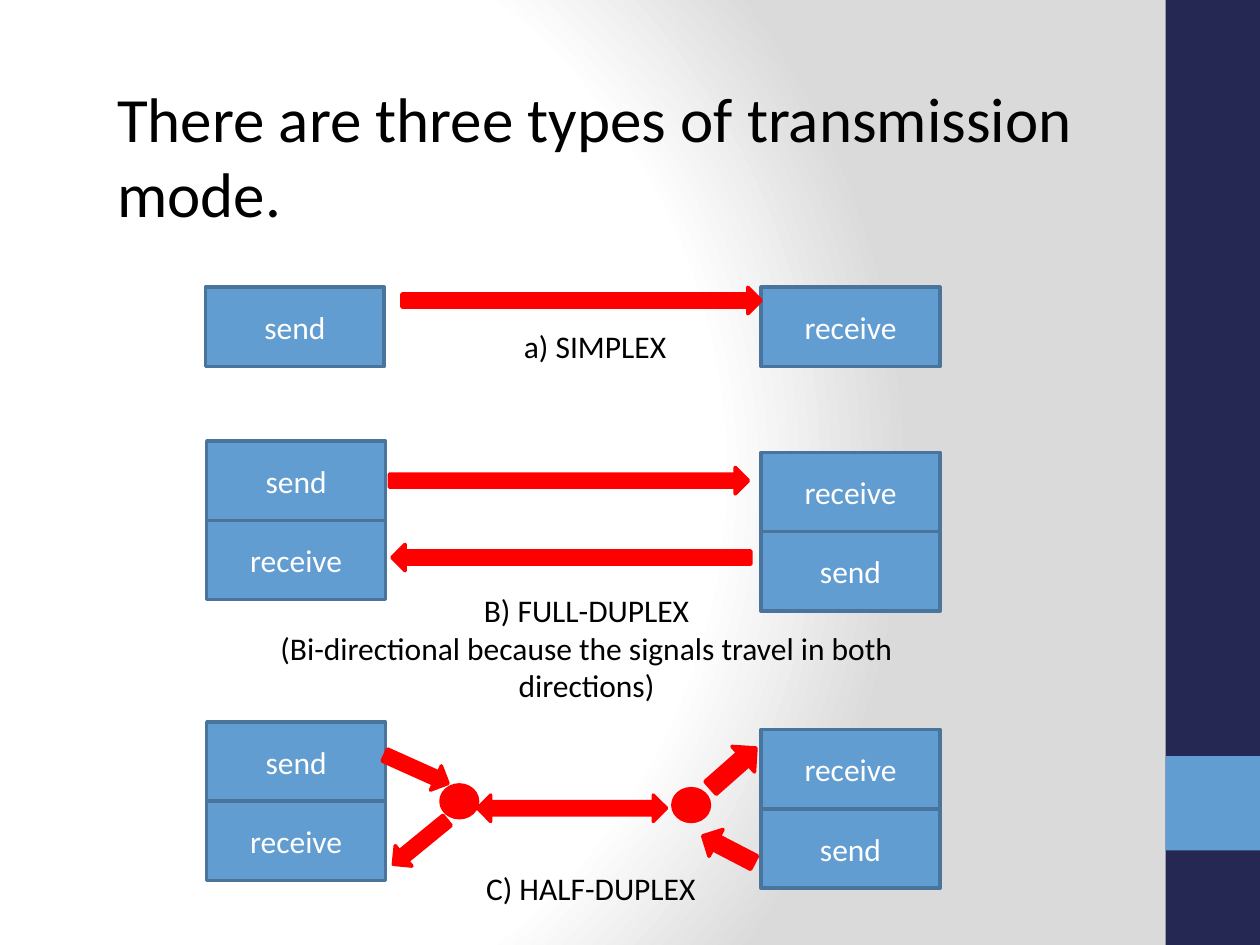
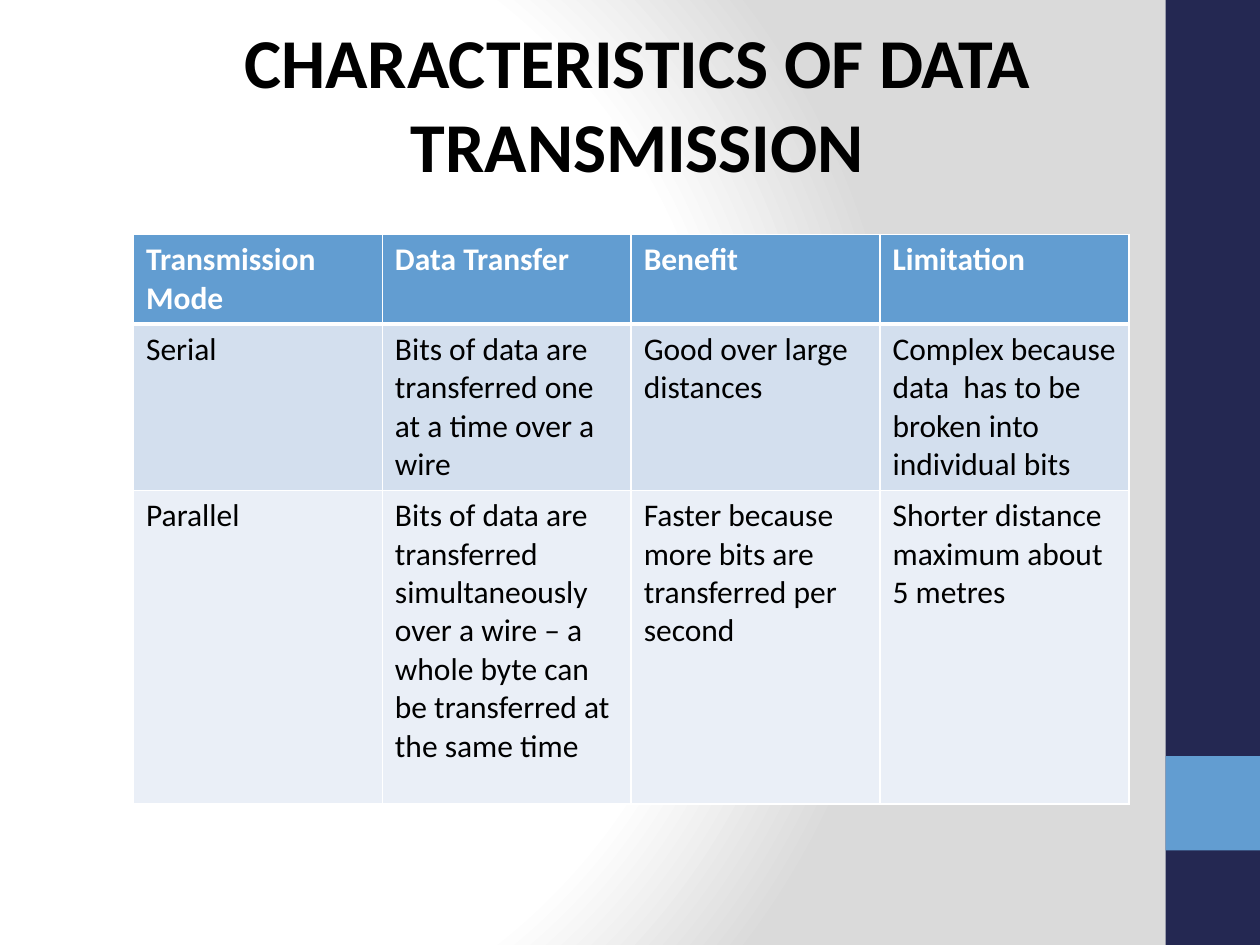
from lxml import etree
from pptx import Presentation
from pptx.dml.color import RGBColor
from pptx.enum.shapes import MSO_SHAPE as SHAPE
from pptx.enum.text import MSO_ANCHOR as ANCHOR, MSO_AUTO_SIZE as AUTO, PP_ALIGN as ALIGN
from pptx.oxml import parse_xml
from pptx.oxml.ns import nsdecls, qn
from pptx.util import Inches, Pt

NAVY = RGBColor(0x24, 0x28, 0x52)
BLUE = RGBColor(0x62, 0x9D, 0xD1)
EDGE = RGBColor(0x49, 0x74, 0x9B)
RED = RGBColor(0xFF, 0x00, 0x00)
BLACK = RGBColor(0x00, 0x00, 0x00)
WHITE = RGBColor(0xFF, 0xFF, 0xFF)
GREY = RGBColor(0xDA, 0xDA, 0xDA)
ROW_FILLS = [BLUE, RGBColor(0xD3, 0xDF, 0xEE), RGBColor(0xEA, 0xEF, 0xF7)]

FONT = "Calibri"
BOX_W, BOX_H = 1.42, 0.63


class Deck:
    """Shared style and the slide being built."""

    def __init__(self):
        self.prs = Presentation()
        self.prs.slide_width, self.prs.slide_height = Inches(10), Inches(7.5)
        self.s = None

    def new_slide(self):
        self.s = self.prs.slides.add_slide(self.prs.slide_layouts[5])

    def decorate_master(self):
        """Put the gradient background and the side bands on the master."""
        master = self.prs.slide_master
        master.background.fill.gradient()
        grad = next(master.element.iter(qn("a:gradFill")))
        stops = "".join(f'<a:gs pos="{pos}"><a:srgbClr val="{color}"/></a:gs>'
                        for pos, color in [(0, WHITE), (75000, WHITE), (100000, GREY)])
        grad.getparent().replace(grad, parse_xml(
            f'<a:gradFill rotWithShape="1" {nsdecls("a")}><a:gsLst>{stops}</a:gsLst>'
            '<a:path path="circle"><a:fillToRect l="20000" t="50000" r="100000" b="50000"/>'
            '</a:path></a:gradFill>'))
        for i, (top, height, color) in enumerate([(0, 7.5, NAVY), (6, 0.75, BLUE)]):
            band = self.shape(SHAPE.RECTANGLE, (9.25, top, 0.75, height), color)
            band.element.nvSpPr.cNvPr.set("id", str(100 + i))
            master.shapes.element.insert(2 + i, band.element)

    def add_text(self, tf, paragraphs, size=18, color=BLACK, bold=False, align=ALIGN.LEFT):
        for i, text in enumerate(paragraphs):
            p = tf.paragraphs[0] if i == 0 else tf.add_paragraph()
            p.alignment = align
            r = p.add_run()
            r.text = text
            r.font.color.rgb = color
            for name, value in {"name": FONT, "size": Pt(size), "bold": bold}.items():
                setattr(r.font, name, value)

    def title(self, text, at, **style):
        sp = self.s.shapes.title
        sp.left, sp.top, sp.width, sp.height = map(Inches, at)
        tf = sp.text_frame
        for name, value in {"word_wrap": True, "auto_size": AUTO.NONE,
                            "vertical_anchor": ANCHOR.BOTTOM}.items():
            setattr(tf, name, value)
        self.add_text(tf, [text], **style)

    def shape(self, kind, at, fill, line=None, rotation=0):
        sp = self.s.shapes.add_shape(kind, *map(Inches, at))
        sp.shadow.inherit = False
        sp.rotation = rotation
        sp.fill.solid()
        sp.fill.fore_color.rgb = fill
        if line is None:
            sp.line.fill.background()
        else:
            sp.line.color.rgb = line
            sp.line.width = Pt(2)
            etree.SubElement(sp.element.spPr.find(qn("a:ln")), qn("a:round"))
        return sp

    def stack(self, left, top, names):
        """Station boxes, one directly below the other."""
        for i, name in enumerate(names):
            sp = self.shape(SHAPE.RECTANGLE, (left, top + i * BOX_H, BOX_W, BOX_H), BLUE, EDGE)
            sp.text_frame.vertical_anchor = ANCHOR.MIDDLE
            self.add_text(sp.text_frame, [name], color=WHITE, align=ALIGN.CENTER)

    def signal(self, at, rotation=0, kind=SHAPE.RIGHT_ARROW):
        self.shape(kind, at, RED, RED, rotation)

    def label(self, paragraphs, at, wrap=False, align=ALIGN.LEFT):
        tf = self.s.shapes.add_textbox(*map(Inches, at)).text_frame
        tf.word_wrap = wrap
        self.add_text(tf, paragraphs, align=align)

    def cell_borders(self, cell, bottom):
        tc_pr = cell._tc.get_or_add_tcPr()
        for i, (side, width) in enumerate({"L": 1, "R": 1, "T": 1, "B": bottom}.items()):
            tc_pr.insert(i, parse_xml(
                f'<a:ln{side} w="{Pt(width)}" {nsdecls("a")}><a:solidFill>'
                f'<a:srgbClr val="{WHITE}"/></a:solidFill></a:ln{side}>'))

    def table(self, rows, left, top, width, heights):
        table = self.s.shapes.add_table(len(rows), len(rows[0]), Inches(left), Inches(top),
                                        Inches(width), Inches(sum(heights))).table
        for i, row in enumerate(rows):
            header = i == 0
            table.rows[i].height = Inches(heights[i])
            for j, text in enumerate(row):
                cell = table.cell(i, j)
                cell.fill.solid()
                cell.fill.fore_color.rgb = ROW_FILLS[i]
                self.cell_borders(cell, bottom=3 if header else 1)
                self.add_text(cell.text_frame, [text], bold=header,
                              color=WHITE if header else BLACK)


def transmission_modes(deck):
    deck.new_slide()
    deck.decorate_master()
    deck.title("There are three types of transmission mode.", (0.83, 0, 8.35, 1.88), size=36)

    # Stations on both sides
    sending, receiving = ["send", "receive"], ["receive", "send"]
    deck.stack(1.63, 2.28, ["send"])
    deck.stack(6.04, 2.28, ["receive"])
    for left_top, right_top in [(3.5, 3.59), (5.73, 5.79)]:
        deck.stack(1.64, left_top, sending)
        deck.stack(6.04, right_top, receiving)

    # Mode names
    deck.label(["a) SIMPLEX"], (4.06, 2.55, 1.34, 0.4))
    deck.label(["B) FULL-DUPLEX", "(Bi-directional because the signals travel in both directions)"],
               (1.63, 4.64, 6.05, 1.01), wrap=True, align=ALIGN.CENTER)
    deck.label(["C) HALF-DUPLEX"], (3.76, 6.85, 1.87, 0.4))

    # Simplex and full-duplex signals
    for left, top, rotation in [(3.19, 2.28, 0), (3.09, 3.71, 0), (3.11, 4.32, 180)]:
        deck.signal((left, top, 2.85, 0.21), rotation)

    # Half-duplex signals through two switches
    deck.signal((3.03, 6, 0.55, 0.21), 24.2)
    deck.signal((5.58, 5.96, 0.48, 0.27), 318.6)
    deck.signal((3.79, 6.31, 1.5, 0.21), kind=SHAPE.LEFT_RIGHT_ARROW)
    for left, top in [(3.5, 6.23), (5.34, 6.26)]:
        deck.shape(SHAPE.OVAL, (left, top, 0.29, 0.26), RED, RED)
    deck.signal((5.55, 6.62, 0.46, 0.24), 207.4)
    deck.signal((3.06, 6.58, 0.55, 0.21), 140.7)


def characteristics(deck):
    deck.new_slide()
    deck.title("CHARACTERISTICS OF DATA TRANSMISSION", (0.91, 0.08, 8.3, 1.45),
               size=40, bold=True, align=ALIGN.CENTER)
    deck.table([
        ["Transmission Mode", "Data Transfer", "Benefit", "Limitation"],
        ["Serial", "Bits of data are transferred one at a time over a wire",
         "Good over large distances",
         "Complex because data  has to be broken into individual bits"],
        ["Parallel", "Bits of data are transferred simultaneously over a wire – a whole byte "
         "can be transferred at the same time",
         "Faster because more bits are transferred per second",
         "Shorter distance maximum about 5 metres"],
    ], 1.06, 1.86, 7.9, [0.7, 1.3, 2.49])


def main():
    deck = Deck()
    transmission_modes(deck)
    characteristics(deck)
    deck.prs.save("out.pptx")


if __name__ == "__main__":
    main()
